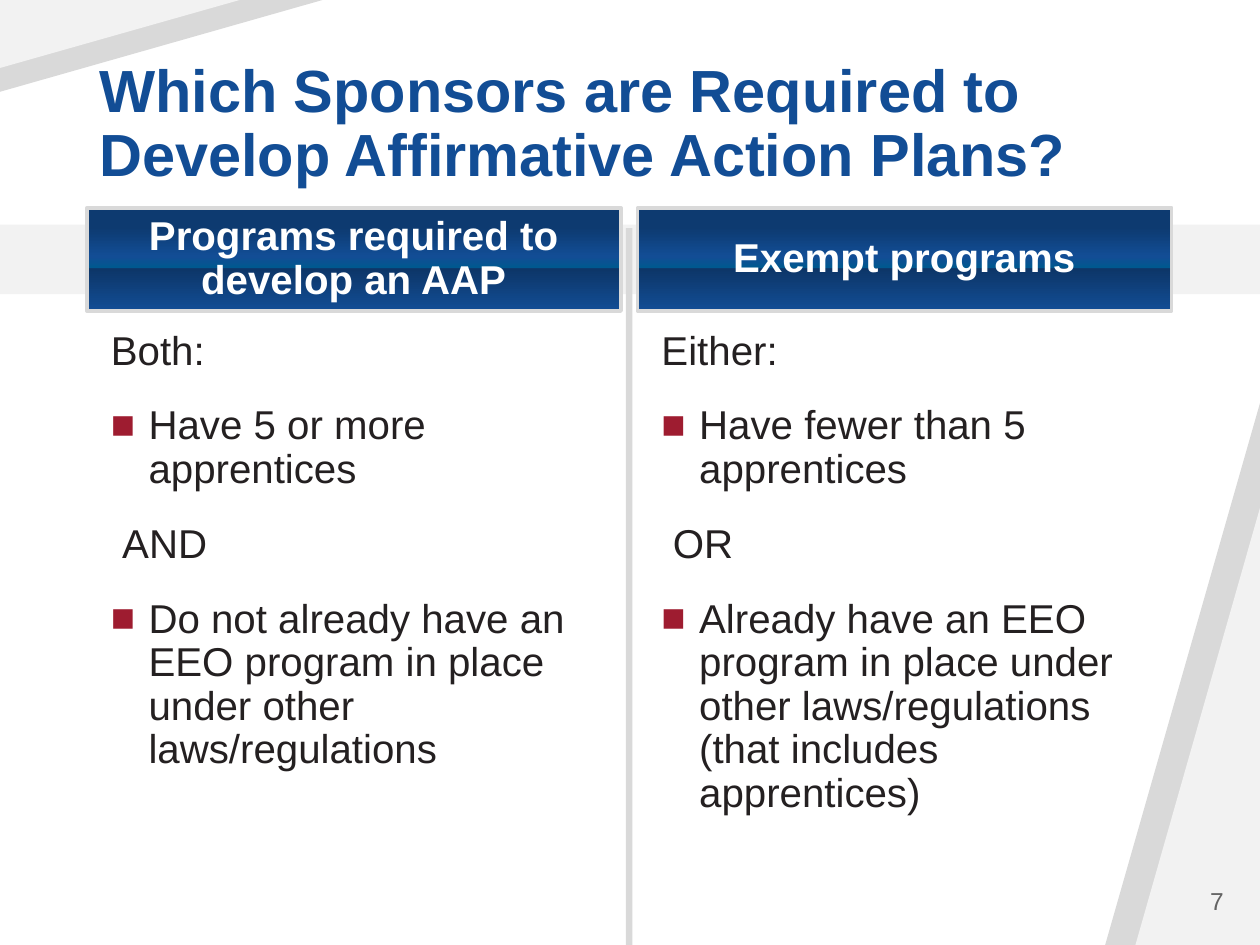
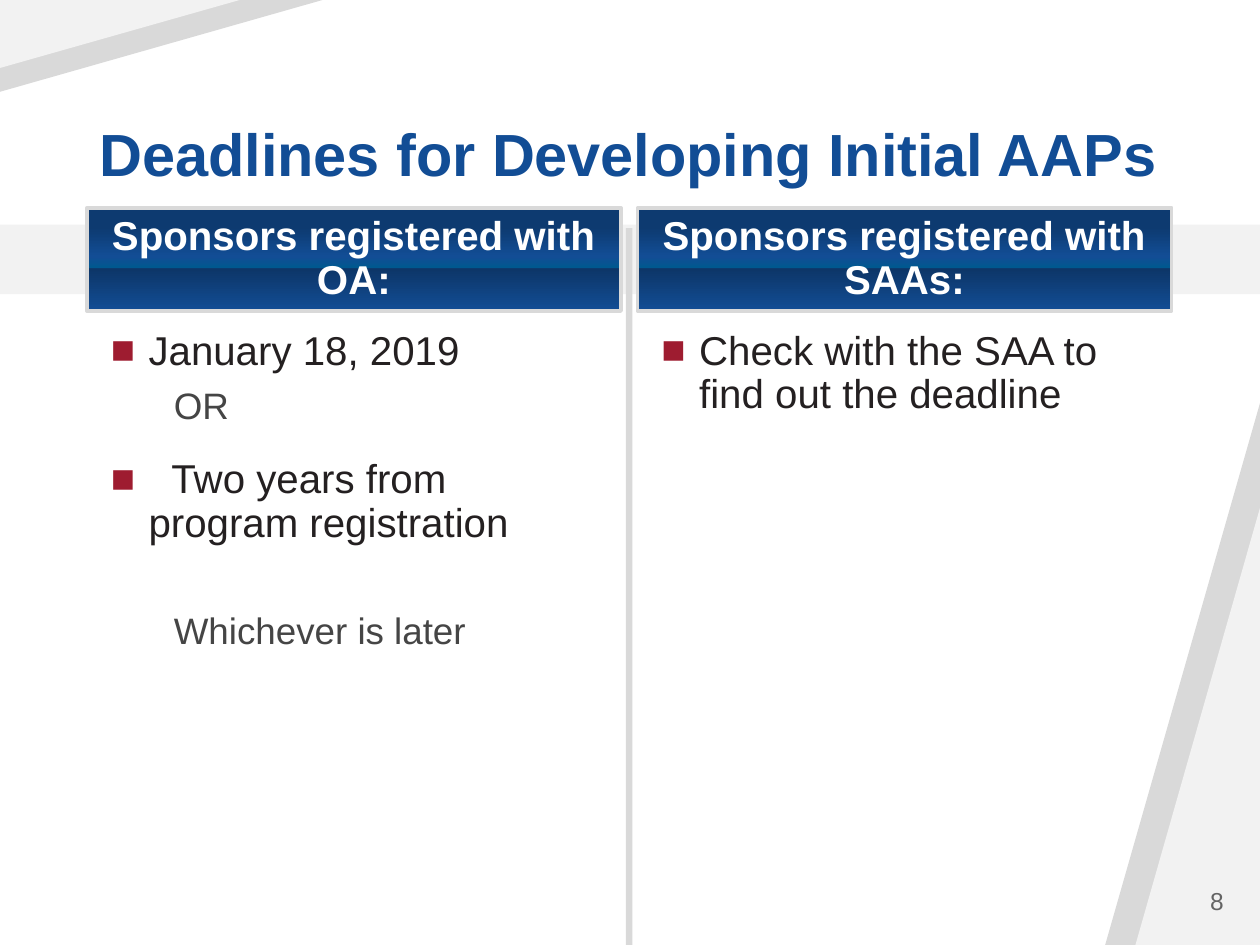
from dataclasses import dataclass
from typing import Any

from lxml.etree import SubElement
from pptx import Presentation
from pptx.dml.color import RGBColor
from pptx.enum.shapes import MSO_SHAPE
from pptx.enum.text import MSO_ANCHOR, MSO_AUTO_SIZE, PP_ALIGN
from pptx.oxml.ns import qn
from pptx.util import Cm, Pt

FONT = "Arial"
WHITE, PALE, GREY = "FFFFFF", "F2F2F2", "D9D9D9"
INK, SOFT, FOOT, RED = "242021", "454545", "646464", "9E1C30"
SHEEN = [(19, "0D3A70"), (47, "124D95"), (58, "00588F"), (59, "0D3668"), (100, "124D95")]
STEP = 11.1  # distance between the two columns, in cm


@dataclass(frozen=True)
class Box:
    left: float
    top: float
    width: float
    height: float

    def shift(self, step: float) -> "Box":
        return Box(self.left + step, self.top, self.width, self.height)

    def sides(self) -> list[Cm]:
        return [Cm(side) for side in (self.left, self.top, self.width, self.height)]


@dataclass(frozen=True)
class Decor:
    kind: MSO_SHAPE
    box: Box
    color: str
    turn: int = 0


@dataclass(frozen=True)
class Style:
    """Look of a list line; lengths in cm, sizes and gaps in points."""
    size: float = 23
    color: str = INK
    level: int = 0
    margin: float = 0
    hang: float = 0
    gap: float = 18
    tab: float = 0


@dataclass(frozen=True)
class Line:
    text: str
    style: Style


@dataclass(frozen=True)
class Column:
    head: str
    lines: list[Line]


@dataclass(frozen=True)
class Page:
    title: str
    number: int
    columns: list[Column]


TITLE = Box(1.75, 1.02, 21.9, 2.92)
HEAD = Box(1.75, 4.19, 10.77, 2.08)
BODY = Box(1.98, 6.53, 10.41, 10.67)
NUMBER = Box(21.36, 17.65, 3.56, 1.02)

TRI, RECT = MSO_SHAPE.ISOSCELES_TRIANGLE, MSO_SHAPE.RECTANGLE
DECOR = [
    Decor(TRI, Box(22.28, 8.13, 3.12, 10.92), GREY),
    Decor(TRI, Box(22.89, 10.24, 2.51, 8.81), PALE),
    Decor(TRI, Box(0, 0, 6.5, 1.85), GREY, 180),
    Decor(TRI, Box(0, 0, 4.83, 1.37), PALE, 180),
    Decor(RECT, Box(0, 4.53, 25.4, 1.4), PALE),
    Decor(RECT, Box(12.62, 4.6, 0.13, 14.45), GREY),
]

PLAIN = Style()
JOIN = Style(margin=0.23)
POINT = Style(margin=0.76, hang=0.76)
INSET = Style(margin=0.76, hang=0.76, tab=1.22)
SUB = Style(size=21, color=SOFT, level=1, margin=1.27, gap=8)
LAST = Style(size=21, color=SOFT, level=1, margin=1.27, gap=38)

PAGES = [
    Page("Which Sponsors are Required to Develop Affirmative Action Plans?", 7, [
        Column("Programs required to develop an AAP", [
            Line("Both:", PLAIN),
            Line("Have 5 or more apprentices", POINT),
            Line("AND", JOIN),
            Line("Do not already have an EEO program in place under other "
                 "laws/regulations", POINT),
        ]),
        Column("Exempt programs", [
            Line("Either:", PLAIN),
            Line("Have fewer than 5 apprentices", POINT),
            Line("OR", JOIN),
            Line("Already have an EEO program in place under other "
                 "laws/regulations (that includes apprentices)", POINT),
        ]),
    ]),
    Page("Deadlines for Developing Initial AAPs", 8, [
        Column("Sponsors registered with OA:", [
            Line("January 18, 2019", POINT),
            Line("OR", SUB),
            Line("\tTwo years from program registration", INSET),
            Line("Whichever is later", LAST),
        ]),
        Column("Sponsors registered with SAAs:", [
            Line("Check with the SAA to find out the deadline", POINT),
        ]),
    ]),
]


def paint(color: Any, code: str) -> None:
    color.rgb = RGBColor.from_string(code)


def shade(fill: Any, props: Any) -> None:
    """Give a fill, held by the element props, the blue sheen from top to bottom."""
    fill.gradient()
    fill.gradient_angle = 270
    stops = props.find(qn("a:gradFill")).find(qn("a:gsLst"))
    for stop in list(stops):
        stops.remove(stop)
    for place, code in SHEEN:
        stop = SubElement(stops, qn("a:gs"), pos=str(place * 1000))
        SubElement(stop, qn("a:srgbClr"), val=code)


def place(shape: Any, box: Box, anchor: MSO_ANCHOR) -> Any:
    """Move a text shape and return its frame, set to a fixed size."""
    shape.left, shape.top, shape.width, shape.height = box.sides()
    frame = shape.text_frame
    frame.word_wrap = True
    frame.auto_size = MSO_AUTO_SIZE.NONE
    frame.vertical_anchor = anchor
    return frame


def style_text(para: Any, size: float, color: str, bold: bool = False,
               align: PP_ALIGN = PP_ALIGN.LEFT) -> None:
    para.alignment = align
    for run in para.runs:
        run.font.name, run.font.size, run.font.bold = FONT, Pt(size), bold
        paint(run.font.color, color)


def draw_decor(slide: Any) -> None:
    """Draw the backdrop and move it to the layout, behind every slide."""
    tree = slide.slide_layout.shapes.element
    for rank, item in enumerate(DECOR):
        shape = slide.shapes.add_shape(item.kind, *item.box.sides())
        if item.kind == TRI:
            shape.adjustments[0] = 1
        shape.rotation = item.turn
        shape.shadow.inherit = False
        shape.fill.solid()
        paint(shape.fill.fore_color, item.color)
        shape.line.fill.background()
        shape.element.nvSpPr.cNvPr.set("id", str(100 + rank))
        tree.insert(2 + rank, shape.element)


def draw_title(shape: Any, text: str) -> None:
    frame = place(shape, TITLE, MSO_ANCHOR.BOTTOM)
    frame.text = text
    para = frame.paragraphs[0]
    para.line_spacing = 0.9
    style_text(para, 34, SHEEN[1][1], bold=True)
    shade(para.runs[0].font.fill, next(shape.element.iter(qn("a:rPr"))))


def draw_head(shape: Any, text: str, box: Box) -> None:
    frame = place(shape, box, MSO_ANCHOR.MIDDLE)
    frame.margin_left = frame.margin_right = Cm(0.13)
    frame.margin_top = frame.margin_bottom = Cm(0.15)
    shade(shape.fill, shape.element.spPr)
    shape.line.width = Pt(2)
    paint(shape.line.color, GREY)
    frame.text = text
    para = frame.paragraphs[0]
    para.line_spacing, para.space_before = 0.9, Pt(0)
    style_text(para, 23, WHITE, bold=True, align=PP_ALIGN.CENTER)


def set_list(para: Any, style: Style) -> None:
    """Set indents, bullet and tab stop of a list line."""
    props = para._p.get_or_add_pPr()
    props.set("marL", str(Cm(style.margin)))
    props.set("indent", str(Cm(-style.hang)))
    if style.hang:
        color = SubElement(props, qn("a:buClr"))
        SubElement(color, qn("a:srgbClr"), val=RED)
        SubElement(props, qn("a:buFont"), typeface=FONT)
        SubElement(props, qn("a:buChar"), char="■")
    else:
        SubElement(props, qn("a:buNone"))
    if style.tab:
        tabs = SubElement(props, qn("a:tabLst"))
        SubElement(tabs, qn("a:tab"), pos=str(Cm(style.tab)), algn="l")


def draw_body(shape: Any, lines: list[Line], box: Box) -> None:
    frame = place(shape, box, MSO_ANCHOR.TOP)
    for rank, line in enumerate(lines):
        para = frame.add_paragraph() if rank else frame.paragraphs[0]
        para.text = line.text
        para.level = line.style.level
        set_list(para, line.style)
        para.line_spacing = 0.9
        para.space_before = Pt(line.style.gap if rank else 0)
        style_text(para, line.style.size, line.style.color)


def draw_page(slide: Any, page: Page) -> None:
    title, *slots = slide.placeholders
    draw_title(title, page.title)
    for rank, column in enumerate(page.columns):
        head, body = slots[2 * rank:2 * rank + 2]
        draw_head(head, column.head, HEAD.shift(rank * STEP))
        draw_body(body, column.lines, BODY.shift(rank * STEP))
    label = slide.shapes.add_textbox(*NUMBER.sides())
    frame = place(label, NUMBER, MSO_ANCHOR.MIDDLE)
    frame.text = str(page.number)
    style_text(frame.paragraphs[0], 14, FOOT, align=PP_ALIGN.RIGHT)


def main() -> None:
    deck = Presentation()
    deck.slide_width, deck.slide_height = Cm(25.4), Cm(19.05)
    layout = deck.slide_layouts.get_by_name("Comparison")
    slides = [deck.slides.add_slide(layout) for _ in PAGES]
    draw_decor(slides[0])
    for slide, page in zip(slides, PAGES):
        draw_page(slide, page)
    deck.save("out.pptx")


if __name__ == "__main__":
    main()
